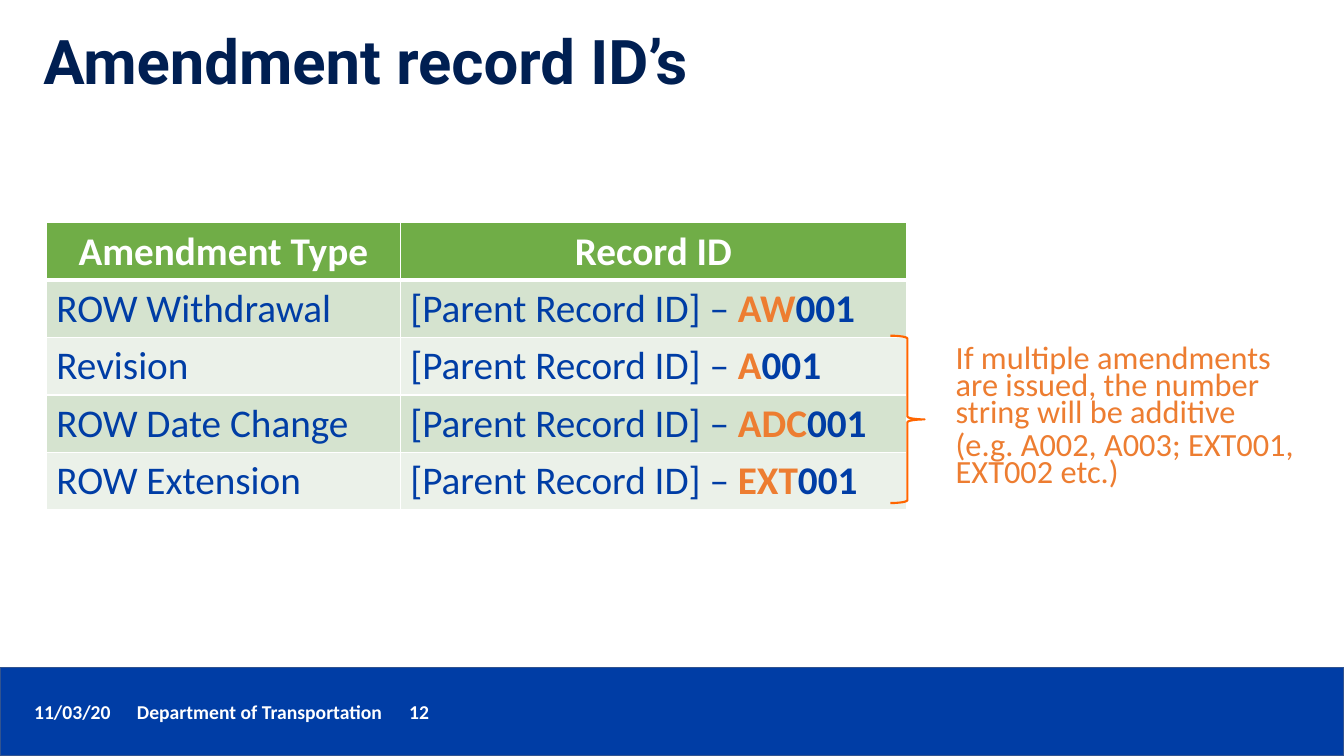
from lxml.etree import SubElement
from pptx import Presentation
from pptx.dml.color import RGBColor
from pptx.enum.shapes import MSO_SHAPE as Shape
from pptx.enum.text import MSO_ANCHOR as Anchor, MSO_AUTO_SIZE as AutoSize, PP_ALIGN as Align
from pptx.oxml.ns import qn
from pptx.util import Inches, Pt

TITLE = "Amendment record ID’s"
HEADINGS = ["Amendment Type", "Record ID"]
PARENT = "[Parent Record ID] – "
NUMBER = "001"
AMENDMENTS = [
    ("ROW Withdrawal", "AW"),
    ("Revision", "A"),
    ("ROW Date Change", "ADC"),
    ("ROW Extension", "EXT"),
]
NOTE = [
    "If multiple amendments are issued, the number string will be additive",
    "(e.g. A002, A003; EXT001, EXT002 etc.)",
]
FOOTER = ["11/03/20", "Department of Transportation", "12"]
FOOTER_TABS = [1.02, 3.72]
COLUMN_WIDTHS = [3.51, 5.02]
ROW_HEIGHT = 0.57

BLUE, NAVY, ORANGE, WHITE = "003DA5", "001F52", "ED7D31", "FFFFFF"
GREEN, BANDS = "70AD47", ["D5E3CF", "EBF1E9"]
BRACE_ORANGE, BAR_EDGE = "FF6600", "31538F"


def color(value):
    return RGBColor.from_string(value)


def box(left, top, width, height):
    return [Inches(v) for v in (left, top, width, height)]


def add_run(paragraph, text, size, ink, bold=False, font="Calibri"):
    run = paragraph.add_run()
    run.text = text
    run.font.name = font
    run.font.size = Pt(size)
    run.font.bold = bold
    run.font.color.rgb = color(ink)


def add_border(cell, side, width):
    line = SubElement(cell._tc.get_or_add_tcPr(), qn("a:" + side), w=str(Pt(width)))
    SubElement(SubElement(line, qn("a:solidFill")), qn("a:srgbClr"), val=WHITE)


def fill_cell(cell, runs, background, align, bottom_width, top_width):
    for side, width in (("lnL", 1), ("lnR", 1), ("lnT", top_width), ("lnB", bottom_width)):
        add_border(cell, side, width)
    cell.fill.solid()
    cell.fill.fore_color.rgb = color(background)
    cell.vertical_anchor = Anchor.MIDDLE
    paragraph = cell.text_frame.paragraphs[0]
    paragraph.alignment = align
    for text, ink, bold in runs:
        add_run(paragraph, text, 28, ink, bold)


def add_title(slide):
    title = slide.shapes.title
    title.left, title.top, title.width, title.height = box(0.33, 0.11, 11.5, 1.07)
    frame = title.text_frame
    frame.auto_size = AutoSize.NONE
    frame.vertical_anchor = Anchor.MIDDLE
    paragraph = frame.paragraphs[0]
    paragraph.alignment = Align.LEFT
    paragraph.line_spacing = 0.9
    add_run(paragraph, TITLE, 44, NAVY, True, "Roboto")


def add_footer(slide):
    bar = slide.shapes.add_shape(Shape.RECTANGLE, *box(0, 6.62, 13.33, 0.88))
    bar.shadow.inherit = False
    bar.fill.solid()
    bar.fill.fore_color.rgb = color(BLUE)
    bar.line.color.rgb = color(BAR_EDGE)
    bar.line.width = Pt(1)
    frame = slide.shapes.add_textbox(*box(0.24, 6.89, 10.06, 0.34)).text_frame
    frame.word_wrap = True
    paragraph = frame.paragraphs[0]
    tabs = SubElement(paragraph._p.get_or_add_pPr(), qn("a:tabLst"))
    for stop in FOOTER_TABS:
        SubElement(tabs, qn("a:tab"), pos=str(Inches(stop)), algn="l")
    add_run(paragraph, "\t".join(FOOTER), 14, WHITE, True)


def add_amendments(slide):
    rows = len(AMENDMENTS) + 1
    frame = slide.shapes.add_table(
        rows, len(HEADINGS), *box(0.46, 2.21, sum(COLUMN_WIDTHS), rows * ROW_HEIGHT))
    table = frame.table
    for column, width in zip(table.columns, COLUMN_WIDTHS):
        column.width = Inches(width)
    for column, heading in enumerate(HEADINGS):
        fill_cell(table.cell(0, column), [(heading, WHITE, True)], GREEN, Align.CENTER, 3, 1)
    for index, (amendment, code) in enumerate(AMENDMENTS):
        record_id = [(PARENT, BLUE, False), (code, ORANGE, True), (NUMBER, BLUE, True)]
        for column, runs in enumerate([[(amendment, BLUE, False)], record_id]):
            fill_cell(table.cell(index + 1, column), runs, BANDS[index % 2],
                      Align.LEFT, 1, 1 if index else 3)


def add_note(slide):
    frame = slide.shapes.add_textbox(*box(9, 3.4, 4.01, 1.66)).text_frame
    frame.word_wrap = True
    for index, sentence in enumerate(NOTE):
        paragraph = frame.add_paragraph() if index else frame.paragraphs[0]
        paragraph._p.get_or_add_pPr().set("marL", str(Inches(0.38)))
        paragraph.line_spacing = 0.7
        if index:
            paragraph.space_before = Pt(3.8)
        add_run(paragraph, sentence, 23.1, ORANGE)
    brace = slide.shapes.add_shape(Shape.LEFT_BRACE, *box(8.83, 3.33, 0.34, 1.66))
    brace.rotation = 180
    brace.shadow.inherit = False
    brace.fill.background()
    brace.line.color.rgb = color(BRACE_ORANGE)
    brace.line.width = Pt(1.5)


def main():
    deck = Presentation()
    deck.slide_width, deck.slide_height = Inches(13.33), Inches(7.5)
    slide = deck.slides.add_slide(deck.slide_layouts[5])
    add_footer(slide)
    add_title(slide)
    add_amendments(slide)
    add_note(slide)
    deck.save("out.pptx")


if __name__ == "__main__":
    main()
